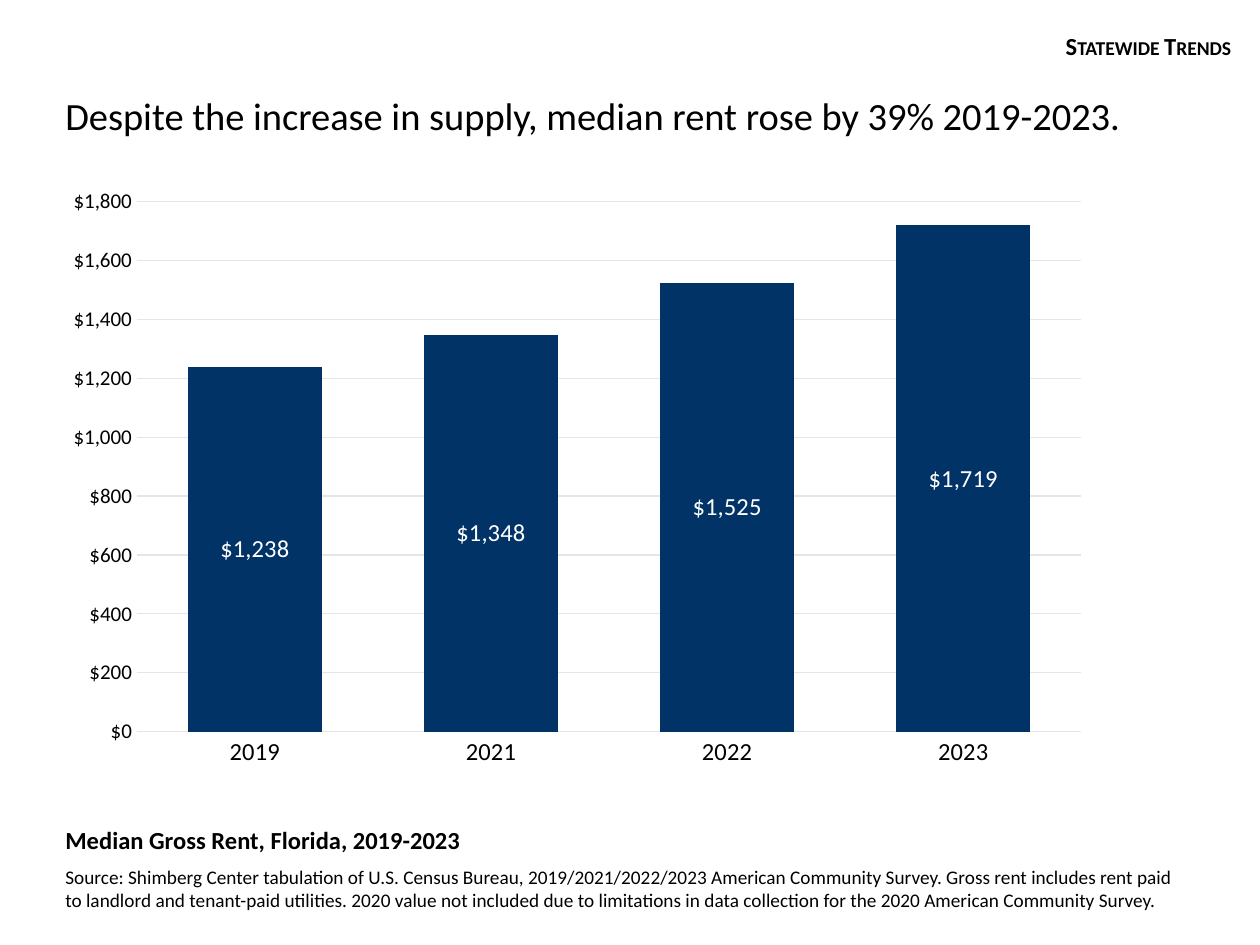
from dataclasses import dataclass

import lxml.etree
import pptx
import pptx.chart.data
import pptx.dml.color
import pptx.enum.chart
import pptx.enum.text
import pptx.oxml.ns
import pptx.util
from pptx.util import Inches

FONT = "Calibri"
COLORS = {"text": "000000", "bar": "023366", "label": "FFFFFF", "grid": "E5E5E5"}
DOLLARS = '"$"#,##0'
RENTS = {"2019": 1238, "2021": 1348, "2022": 1525, "2023": 1719}
PLOT_AREA = {"x": 0.08, "y": 0.04, "w": 0.9, "h": 0.88}


@dataclass
class TextItem:
    text: str
    left: float
    top: float
    width: float
    height: float
    size: int
    bold: bool = False
    small_caps: bool = False
    wrap: bool = True
    anchor: pptx.enum.text.MSO_ANCHOR = pptx.enum.text.MSO_ANCHOR.TOP
    alignment: pptx.enum.text.PP_ALIGN = pptx.enum.text.PP_ALIGN.LEFT
    line_spacing: float = 1.0
    space_before: int = 0
    space_after: int = 0


TEXT_ITEMS = [
    TextItem("Despite the increase in supply, median rent rose by 39% 2019-2023.",
             0.42, 0.68, 9.35, 0.47, 22, anchor=pptx.enum.text.MSO_ANCHOR.BOTTOM),
    TextItem("Median Gross Rent, Florida, 2019-2023", 0.42, 6.47, 8.67, 0.35, 14,
             bold=True, line_spacing=1.12, space_before=10, space_after=10),
    TextItem("Source: Shimberg Center tabulation of U.S. Census Bureau, "
             "2019/2021/2022/2023 American Community Survey. Gross rent includes "
             "rent paid to landlord and tenant-paid utilities. 2020 value not "
             "included due to limitations in data collection for the 2020 American "
             "Community Survey.", 0.42, 6.82, 9, 0.47, 11),
    TextItem("Statewide Trends", 8.32, 0.2, 1.55, 0.34, 14, bold=True,
             small_caps=True, wrap=False, space_before=6,
             alignment=pptx.enum.text.PP_ALIGN.RIGHT),
]


def rgb(name: str) -> pptx.dml.color.RGBColor:
    return pptx.dml.color.RGBColor.from_string(COLORS[name])


def style_font(font: pptx.text.text.Font, size: int, color: str = "text") -> None:
    font.name = FONT
    font.size = pptx.util.Pt(size)
    font.color.rgb = rgb(color)


def add_text(slide: pptx.slide.Slide, item: TextItem) -> None:
    shape = slide.shapes.add_textbox(Inches(item.left), Inches(item.top),
                                     Inches(item.width), Inches(item.height))
    text_frame = shape.text_frame
    text_frame.text = item.text
    text_frame.word_wrap = item.wrap
    text_frame.vertical_anchor = item.anchor
    paragraph = text_frame.paragraphs[0]
    paragraph.alignment = item.alignment
    paragraph.line_spacing = item.line_spacing
    paragraph.space_before = pptx.util.Pt(item.space_before)
    paragraph.space_after = pptx.util.Pt(item.space_after)
    run = paragraph.runs[0]
    style_font(run.font, item.size)
    run.font.bold = item.bold
    if item.small_caps:
        run.font._element.set("cap", "small")


def style_line(line: pptx.dml.line.LineFormat) -> None:
    line.color.rgb = rgb("grid")
    line.width = pptx.util.Pt(0.75)


def set_plot_area(chart: pptx.chart.chart.Chart) -> None:
    """Fix the inner plot area as fractions of the chart frame."""
    qn = pptx.oxml.ns.qn
    plot_area = chart._chartSpace.find(".//" + qn("c:plotArea"))
    for old_layout in plot_area.findall(qn("c:layout")):
        plot_area.remove(old_layout)
    layout = lxml.etree.Element(qn("c:layout"))
    plot_area.insert(0, layout)
    manual = lxml.etree.SubElement(layout, qn("c:manualLayout"))
    settings = {"layoutTarget": "inner", "xMode": "edge", "yMode": "edge", **PLOT_AREA}
    for tag, value in settings.items():
        lxml.etree.SubElement(manual, qn(f"c:{tag}")).set("val", str(value))


def add_rent_chart(slide: pptx.slide.Slide) -> None:
    data = pptx.chart.data.CategoryChartData(number_format=DOLLARS)
    data.categories = list(RENTS)
    data.add_series("Series 1", list(RENTS.values()))
    chart = slide.shapes.add_chart(
        pptx.enum.chart.XL_CHART_TYPE.COLUMN_CLUSTERED,
        Inches(0.42), Inches(1.41), Inches(8.33), Inches(4.78), data).chart
    chart.has_legend = False
    chart.has_title = False
    style_font(chart.font, 11)
    set_plot_area(chart)

    for axis, size in ((chart.category_axis, 14), (chart.value_axis, 12)):
        axis.major_tick_mark = pptx.enum.chart.XL_TICK_MARK.NONE
        axis.minor_tick_mark = pptx.enum.chart.XL_TICK_MARK.NONE
        style_font(axis.tick_labels.font, size)
    style_line(chart.category_axis.format.line)
    value_axis = chart.value_axis
    value_axis.minimum_scale = 0
    value_axis.maximum_scale = 1800
    value_axis.major_unit = 200
    value_axis.format.line.fill.background()
    style_line(value_axis.major_gridlines.format.line)
    value_axis.tick_labels.number_format = DOLLARS
    value_axis.tick_labels.number_format_is_linked = False

    plot = chart.plots[0]
    plot.gap_width = 76
    plot.overlap = -11
    plot.vary_by_categories = False
    series = plot.series[0]
    series.format.fill.solid()
    series.format.fill.fore_color.rgb = rgb("bar")
    labels = series.data_labels
    labels.show_value = True
    labels.position = pptx.enum.chart.XL_LABEL_POSITION.CENTER
    labels.number_format = DOLLARS
    labels.number_format_is_linked = False
    style_font(labels.font, 14, "label")


def main() -> None:
    presentation = pptx.Presentation()
    presentation.slide_width = Inches(10)
    presentation.slide_height = Inches(7.5)
    slide = presentation.slides.add_slide(presentation.slide_layouts[6])
    for item in TEXT_ITEMS:
        add_text(slide, item)
    add_rent_chart(slide)
    presentation.save("out.pptx")


if __name__ == "__main__":
    main()
